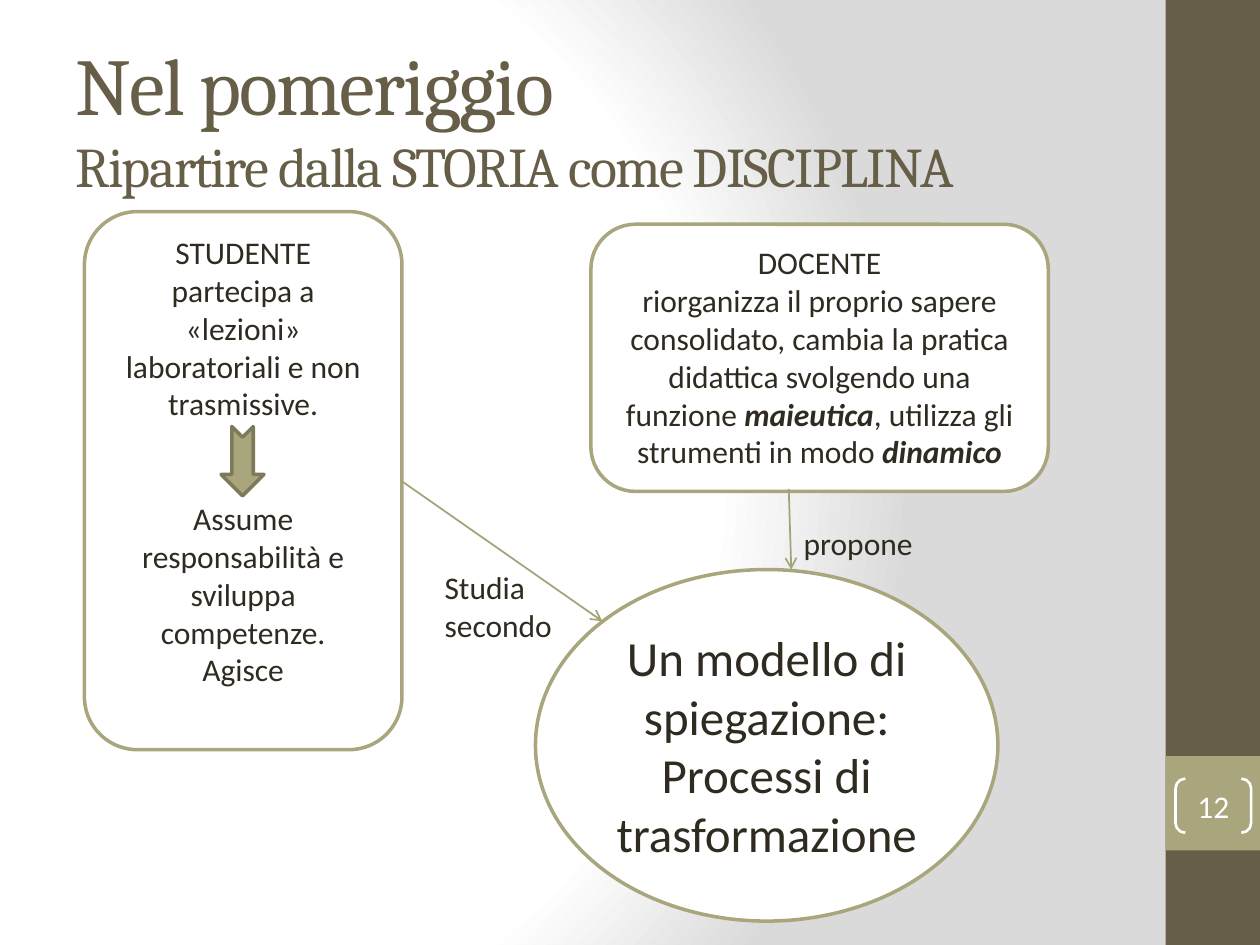
from pptx import Presentation, oxml
from pptx import util as u
from pptx.dml.color import RGBColor
from pptx.enum import shapes, text
from pptx.oxml.ns import nsdecls, qn
from lxml import etree

COLS, ROWS = 100, 75  # square grid cells, a tenth of an inch each
COLORS = {"brown": "675E47", "olive": "A9A57C", "arrow": "A6A278",
          "edge": "7D7A5C", "ink": "2F2B20", "white": "FFFFFF", "grey": "DADADA"}
SHAPE = shapes.MSO_SHAPE
LEFT, CENTER = text.PP_ALIGN.LEFT, text.PP_ALIGN.CENTER
TOP, MIDDLE = text.MSO_ANCHOR.TOP, text.MSO_ANCHOR.MIDDLE


def rgb(name):
    return RGBColor.from_string(COLORS[name])


def add_text(p, words, size=18, font="Calibri", color="ink", bold=None, italic=None):
    r = p.add_run()
    r.text = words
    f = r.font
    f.size, f.name, f.bold, f.italic = u.Pt(size), font, bold, italic
    f.color.rgb = rgb(color)
    return r


class Deck:
    def __init__(self):
        self.prs = Presentation()
        self.prs.slide_width, self.prs.slide_height = u.Inches(10), u.Inches(7.5)
        self.s = self.prs.slides.add_slide(self.prs.slide_layouts[5])

    def grid(self, *cells):
        """Turn alternating columns and rows into slide lengths."""
        units = (self.prs.slide_width / COLS, self.prs.slide_height / ROWS)
        return [u.Emu(round(n * units[i % 2])) for i, n in enumerate(cells)]

    def background(self, stops, focus):
        """Circular gradient; focus holds its left, top, right, bottom in percent."""
        fill = self.s.background.fill
        fill.solid()
        solid = self.s.element.find(".//" + qn("p:bgPr") + "/" + qn("a:solidFill"))
        gs = "".join(f'<a:gs pos="{pos * 1000}"><a:srgbClr val="{COLORS[c]}"/></a:gs>'
                     for pos, c in stops)
        rect = " ".join(f'{side}="{n * 1000}"' for side, n in zip("ltrb", focus))
        solid.getparent().replace(solid, oxml.parse_xml(
            f'<a:gradFill {nsdecls("a")} rotWithShape="1"><a:gsLst>{gs}</a:gsLst>'
            f'<a:path path="circle"><a:fillToRect {rect}/></a:path></a:gradFill>'))

    def title(self, at, lines):
        sp = self.s.shapes.title
        sp.left, sp.top, sp.width, sp.height = self.grid(*at)
        tf = sp.text_frame
        tf.auto_size, tf.vertical_anchor = text.MSO_AUTO_SIZE.NONE, MIDDLE
        p = tf.paragraphs[0]
        p.alignment = LEFT
        for i, (words, size) in enumerate(lines):
            if i:
                p.add_line_break()
            r = add_text(p, words, size, "Cambria", "brown")
            r.font._element.set("spc", "-100")

    def shape(self, kind, at, fill=None, line=None, width=2, rotation=0):
        sp = self.s.shapes.add_shape(kind, *self.grid(*at))
        sp.shadow.inherit = False
        sp.rotation = rotation
        if fill:
            sp.fill.solid()
            sp.fill.fore_color.rgb = rgb(fill)
        else:
            sp.fill.background()
        if line:
            sp.line.color.rgb, sp.line.width = rgb(line), u.Pt(width)
        else:
            sp.line.fill.background()
        return sp

    def fill_text(self, sp, paragraphs, align=CENTER, anchor=TOP, gaps=None, **style):
        """Fill with paragraphs of (words, emphasised) parts; gaps: index to points before."""
        tf = sp.text_frame
        tf.word_wrap, tf.vertical_anchor = True, anchor
        for i, parts in enumerate(paragraphs):
            p = tf.add_paragraph() if i else tf.paragraphs[0]
            p.alignment = align
            p.space_before = u.Pt((gaps or {}).get(i, 0))
            for words, strong in [(parts, None)] if isinstance(parts, str) else parts:
                add_text(p, words, bold=strong, italic=strong, **style)
        return tf

    def box(self, kind, at, paragraphs, **style):
        self.fill_text(self.shape(kind, at, "white", "olive"), paragraphs, **style)

    def label(self, at, words):
        self.fill_text(self.s.shapes.add_textbox(*self.grid(*at)), [words], align=LEFT)

    def arrow(self, *ends):
        c = self.s.shapes.add_connector(shapes.MSO_CONNECTOR.STRAIGHT, *self.grid(*ends))
        c.line.color.rgb, c.line.width = rgb("arrow"), u.Pt(1)
        ln = c.element.spPr.find(qn("a:ln"))
        etree.SubElement(ln, qn("a:tailEnd"), type="arrow")
        etree.SubElement(c.element.spPr, qn("a:effectLst"))

    def page_number(self, at, number):
        sp = self.shape(SHAPE.DOUBLE_BRACKET, at, line="white", width=1.5)
        sp.adjustments[0] = 0.18
        tf = self.fill_text(sp, [number], anchor=MIDDLE, color="white")
        tf.margin_left = tf.margin_right = tf.margin_top = tf.margin_bottom = 0


def main():
    d = Deck()
    d.background([(0, "white"), (75, "white"), (100, "grey")], (20, 50, 100, 50))
    d.shape(SHAPE.RECTANGLE, (92.5, 0, 7.5, ROWS), "brown")
    d.shape(SHAPE.RECTANGLE, (92.5, 60, 7.5, 7.5), "olive")
    d.title((5, 3, 83.3, 12.5), [("Nel pomeriggio", 46),
                                 ("Ripartire dalla STORIA come DISCIPLINA", 32)])
    d.page_number((93.3, 61.8, 6, 4.3), "12")

    d.box(SHAPE.OVAL, (42.5, 45.2, 36.7, 27.9),
          ["Un modello di spiegazione:", "Processi di trasformazione"], size=28)
    d.box(SHAPE.ROUNDED_RECTANGLE, (6.7, 16.8, 25.2, 42.7),
          ["STUDENTE", "partecipa a «lezioni» laboratoriali e non trasmissive.",
           "Assume responsabilità e sviluppa competenze.", "Agisce"], gaps={2: 44})
    d.shape(SHAPE.NOTCHED_RIGHT_ARROW, (16.5, 34.9, 5.5, 3.4), "olive", "edge", rotation=90)
    d.box(SHAPE.ROUNDED_RECTANGLE, (46.9, 17.8, 36.3, 21.2),
          ["DOCENTE",
           [("riorganizza il proprio sapere consolidato, cambia la pratica didattica "
             "svolgendo una funzione ", None), ("maieutica", True),
            (", utilizza gli strumenti in modo ", None), ("dinamico", True)]])

    d.arrow(31.9, 38.2, 47.8, 49.3)
    d.arrow(62.6, 38.8, 62.8, 45.2)
    d.label((34.3, 44.6, 13.5, 7.1), "Studia secondo")
    d.label((62.8, 41.1, 18.1, 4), "propone")
    d.prs.save("out.pptx")


if __name__ == "__main__":
    main()
